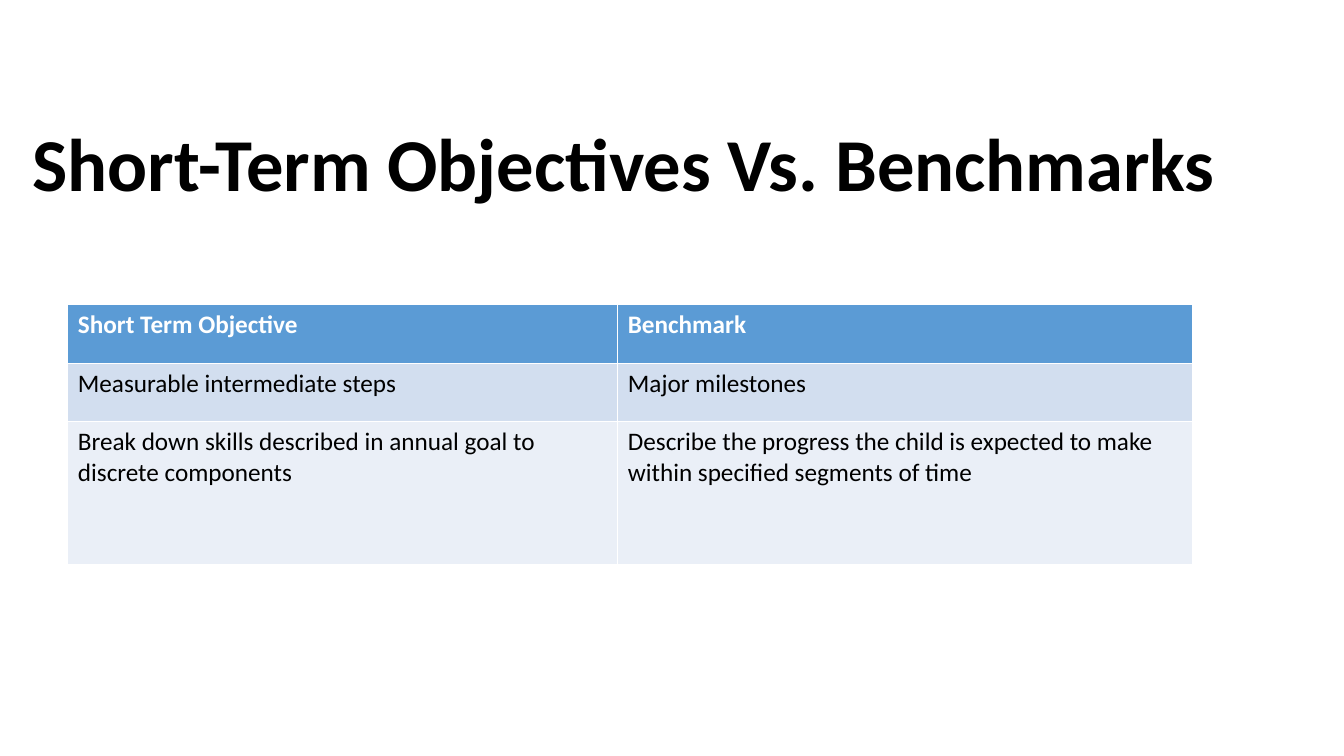
import pptx
import pptx.util
import pptx.dml.color
import pptx.enum.text
from pptx.util import Cm

THEME = {
    "font": "Calibri",
    "title_size": 53.3,
    "table_size": 18,
    "dark": "000000",
    "light": "FFFFFF",
    "row_fills": ["5B9BD5", "D2DEEF", "EAEFF7"],
}


def format_text(paragraph, size, color, bold):
    values = {"name": THEME["font"], "size": pptx.util.Pt(size), "bold": bold}
    for name, value in values.items():
        setattr(paragraph.font, name, value)
    paragraph.font.color.rgb = pptx.dml.color.RGBColor.from_string(color)


# Slide
presentation = pptx.Presentation()
presentation.slide_width = Cm(33.87)
presentation.slide_height = Cm(19.05)
slide = presentation.slides.add_slide(presentation.slide_layouts[5])

# Title
title = slide.shapes.title
title_box = {"left": Cm(0.56), "top": Cm(2.74), "width": Cm(32.74), "height": Cm(2.97)}
for name, value in title_box.items():
    setattr(title, name, value)
title.text_frame.text = "Short-Term Objectives Vs. Benchmarks"
title.text_frame.word_wrap = True
title.text_frame.auto_size = pptx.enum.text.MSO_AUTO_SIZE.NONE
title.text_frame.vertical_anchor = pptx.enum.text.MSO_ANCHOR.MIDDLE
paragraph = title.text_frame.paragraphs[0]
paragraph.alignment = pptx.enum.text.PP_ALIGN.LEFT
paragraph.line_spacing = 0.9
format_text(paragraph, THEME["title_size"], THEME["dark"], True)

# Comparison table: the default style supplies the white borders
comparison = [
    ["Short Term Objective", "Benchmark"],
    ["Measurable intermediate steps", "Major milestones"],
    [
        "Break down skills described in annual goal to discrete components",
        "Describe the progress the child is expected to make within specified segments of time",
    ],
]
column_widths = [13.86, 14.48]
row_heights = [1.47, 1.47, 3.6]
table = slide.shapes.add_table(
    len(comparison), len(column_widths), Cm(1.71), Cm(7.68),
    Cm(sum(column_widths)), Cm(sum(row_heights)),
).table
for column, width in zip(table.columns, column_widths):
    column.width = Cm(width)
for row, height in zip(table.rows, row_heights):
    row.height = Cm(height)

for row_index, (texts, fill) in enumerate(zip(comparison, THEME["row_fills"])):
    is_header = row_index == 0
    for column_index, text in enumerate(texts):
        cell = table.cell(row_index, column_index)
        cell.text = text
        cell.fill.solid()
        cell.fill.fore_color.rgb = pptx.dml.color.RGBColor.from_string(fill)
        color = THEME["light"] if is_header else THEME["dark"]
        format_text(cell.text_frame.paragraphs[0], THEME["table_size"], color, is_header)

presentation.save("out.pptx")
